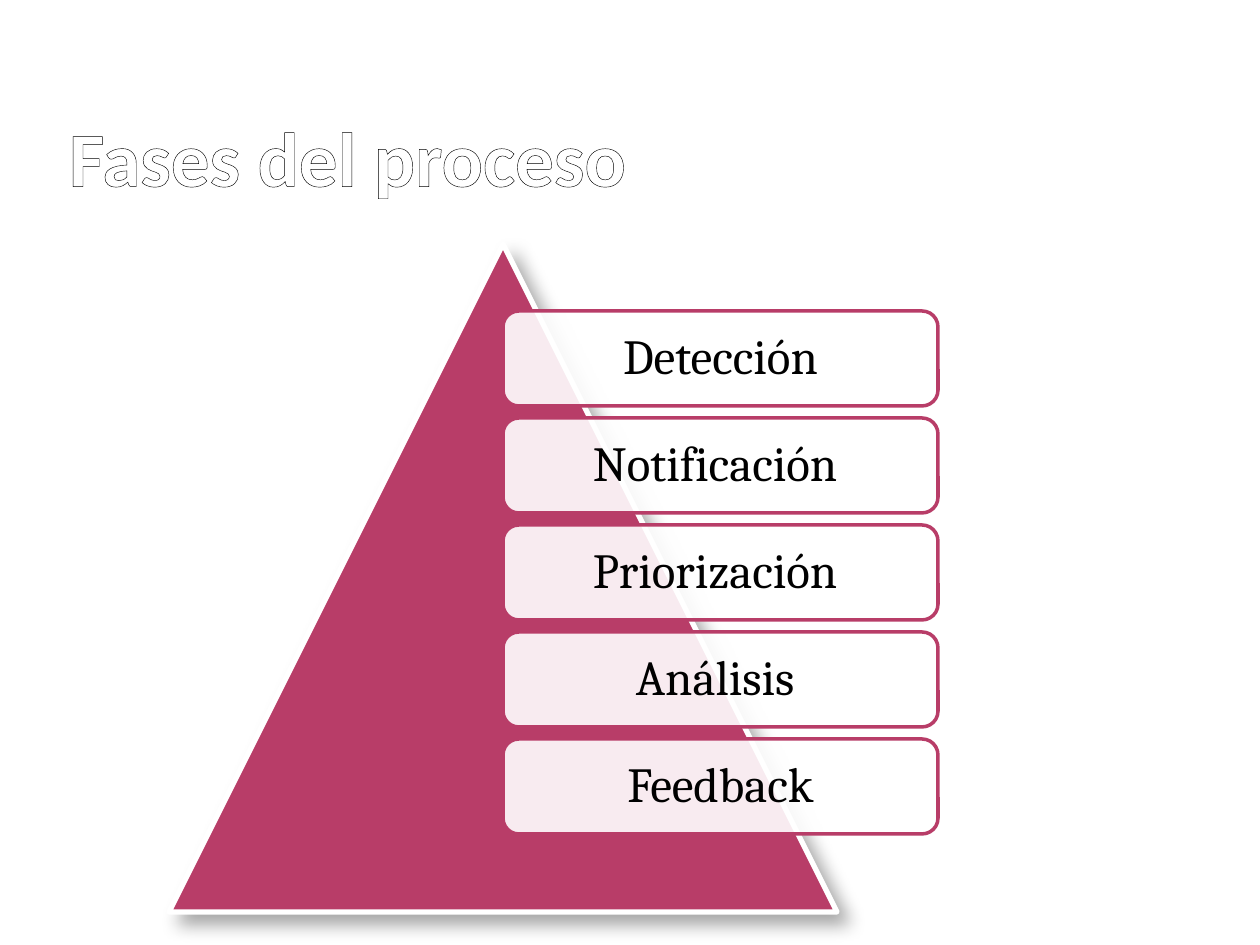
"""Build the process phases slide: a pyramid with five labelled boxes."""
from lxml import etree
from pptx import Presentation
from pptx.dml.color import RGBColor
from pptx.enum.shapes import MSO_SHAPE
from pptx.enum.text import MSO_ANCHOR, PP_ALIGN
from pptx.oxml import parse_xml
from pptx.util import Pt

TRIANGLE, ROUNDED = MSO_SHAPE.ISOSCELES_TRIANGLE, MSO_SHAPE.ROUNDED_RECTANGLE
BOTTOM, MIDDLE, CENTER = MSO_ANCHOR.BOTTOM, MSO_ANCHOR.MIDDLE, PP_ALIGN.CENTER
NS = "http://schemas.openxmlformats.org/drawingml/2006/main"
PX = 914400 / 126
THEME = {
    "accent": "B83D68", "white": "FFFFFF", "black": "000000",
    "title_font": "Calibri", "title_size": 44,
    "body_font": "Cambria", "body_size": 28,
    "title_stops": [(0, "FFFFFF"), (9, "FFFFFF"), (50, "7F7F7F"), (79, "FFFFFF"), (100, "FFFFFF")],
}


def px(*values):
    return [round(v * PX) for v in values]


def add_box(kind, box, line, width):
    s = shapes.add_shape(kind, *px(*box))
    s.shadow.inherit = False
    s.fill.solid()
    s.line.color.rgb = RGBColor.from_string(THEME[line])
    s.line.width = Pt(width)
    return s


prs = Presentation()
prs.slide_width, prs.slide_height = px(1260, 945)
shapes = prs.slides.add_slide(prs.slide_layouts[6]).shapes

title = shapes.add_textbox(*px(63, 44, 998, 158))
tf = title.text_frame
tf.word_wrap = True
tf.vertical_anchor = BOTTOM
margin = px(6)[0]
for name, value in {"margin_left": margin, "margin_right": margin, "margin_top": 0, "margin_bottom": 0}.items():
    setattr(tf, name, value)
r = tf.paragraphs[0].add_run()
r.text = "Fases del proceso"
for name, value in {"size": Pt(THEME["title_size"]), "bold": True, "name": THEME["title_font"]}.items():
    setattr(r.font, name, value)
rPr = r._r.get_or_add_rPr()
stops = "".join(f'<a:gs pos="{p * 1000}"><a:srgbClr val="{c}"/></a:gs>' for p, c in THEME["title_stops"])
rPr.insert(0, parse_xml(
    f'<a:ln xmlns:a="{NS}" w="10541"><a:solidFill><a:srgbClr val="{THEME["black"]}"/></a:solidFill></a:ln>'))
rPr.insert(1, parse_xml(
    f'<a:gradFill xmlns:a="{NS}"><a:gsLst>{stops}</a:gsLst><a:lin ang="5400000"/></a:gradFill>'))

pyramid = add_box(TRIANGLE, (169, 244, 668, 668), "white", 3)
pyramid.fill.fore_color.rgb = RGBColor.from_string(THEME["accent"])
pyramid._element.spPr.find(f"{{{NS}}}effectLst").append(parse_xml(
    f'<a:outerShdw xmlns:a="{NS}" blurRad="{Pt(10.2)}" dist="{Pt(8)}" dir="2700000" algn="tl" rotWithShape="0">'
    f'<a:srgbClr val="{THEME["black"]}"><a:alpha val="35000"/></a:srgbClr></a:outerShdw>'))

phases = ["Detección", "Notificación ", "Priorización ", "Análisis ", "Feedback"]
for i, phase in enumerate(phases):
    s = add_box(ROUNDED, (503, 311 + 107 * i, 435, 95), "accent", 2)
    s.fill.fore_color.rgb = RGBColor.from_string(THEME["white"])
    color = s._element.spPr.find(f"{{{NS}}}solidFill")[0]
    etree.SubElement(color, f"{{{NS}}}alpha", val="90000")
    tf = s.text_frame
    tf.word_wrap = True
    tf.vertical_anchor = MIDDLE
    for side in ("left", "right", "top", "bottom"):
        setattr(tf, f"margin_{side}", px(15)[0])
    p = tf.paragraphs[0]
    p.alignment = CENTER
    p.line_spacing = 0.9
    r = p.add_run()
    r.text = phase
    for name, value in {"size": Pt(THEME["body_size"]), "name": THEME["body_font"]}.items():
        setattr(r.font, name, value)
    r.font.color.rgb = RGBColor.from_string(THEME["black"])

prs.save("out.pptx")
